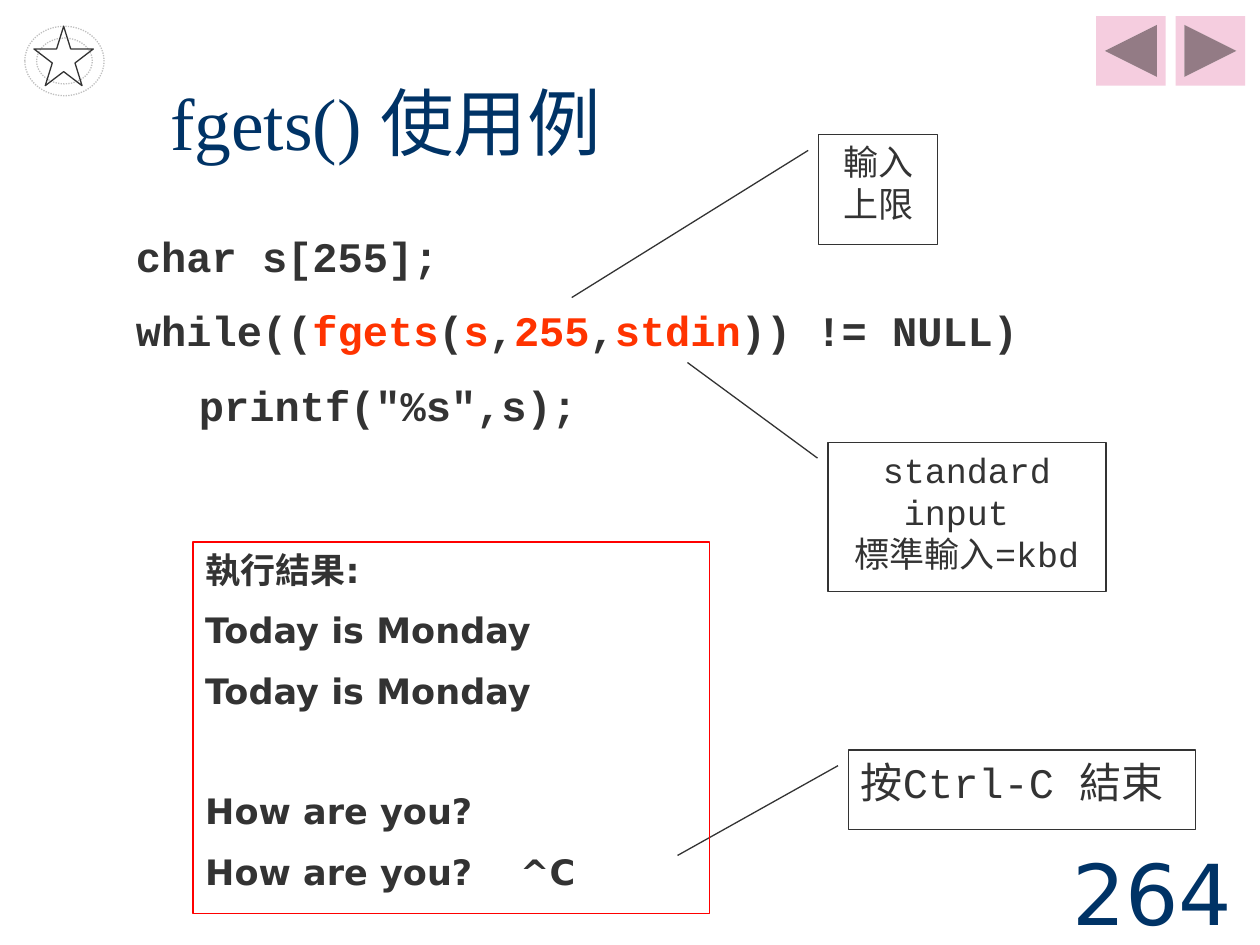
from dataclasses import dataclass

from pptx import Presentation
from pptx.dml.color import RGBColor
from pptx.enum.dml import MSO_LINE
from pptx.enum.shapes import MSO_SHAPE
from pptx.enum.text import MSO_ANCHOR, PP_ALIGN
from pptx.util import Pt


@dataclass(frozen=True)
class Theme:
    navy: RGBColor = RGBColor(0x00, 0x33, 0x66)
    ink: RGBColor = RGBColor(0x33, 0x33, 0x33)
    accent: RGBColor = RGBColor(0xFF, 0x33, 0x00)
    frame: RGBColor = RGBColor(0xFF, 0x00, 0x00)
    button: RGBColor = RGBColor(0xF5, 0xCD, 0xDF)
    ring: RGBColor = RGBColor(0xC0, 0xC0, 0xC0)
    serif: str = "Times New Roman"
    mono: str = "Courier New"
    sans: str = "DejaVu Sans"
    number_size: int = 48
    title_size: int = 42
    code_size: int = 24
    note_size: int = 20


theme = Theme()


def add_outline(page, kind, left, top, width, height, color, weight=0.75):
    """Add an unfilled preset shape with a plain outline."""
    shape = page.shapes.add_shape(kind, Pt(left), Pt(top), Pt(width), Pt(height))
    shape.shadow.inherit = False
    shape.fill.background()
    shape.line.color.rgb = color
    shape.line.width = Pt(weight)
    return shape


def write(box, lines, font, size, color=theme.ink, bold=False,
          align=PP_ALIGN.LEFT, anchor=MSO_ANCHOR.TOP, gaps=None):
    """Fill a box; each line is a list of (text, colour or None) spans."""
    frame = box.text_frame
    frame.word_wrap = True
    frame.vertical_anchor = anchor
    for index, spans in enumerate(lines):
        para = frame.paragraphs[0] if index == 0 else frame.add_paragraph()
        para.alignment = align
        if gaps:
            para.space_before = Pt(gaps[index])
        for text, span_color in spans:
            span = para.add_run()
            span.text = text
            span.font.name = font
            span.font.size = Pt(size)
            span.font.bold = bold
            span.font.color.rgb = span_color or color


deck = Presentation()
deck.slide_width, deck.slide_height = Pt(720), Pt(540)
page = deck.slides.add_slide(deck.slide_layouts[5])

# Navigation buttons and ring ornament
buttons = [(MSO_SHAPE.ACTION_BUTTON_FORWARD_OR_NEXT, 671.8),
           (MSO_SHAPE.ACTION_BUTTON_BACK_OR_PREVIOUS, 626.4)]
for kind, left in buttons:
    button = page.shapes.add_shape(kind, Pt(left), Pt(9.2), Pt(39.7), Pt(39.7))
    button.shadow.inherit = False
    button.fill.solid()
    button.fill.fore_color.rgb = theme.button
    button.line.fill.background()

ring = add_outline(page, MSO_SHAPE.DONUT, 14.2, 15, 45.3, 39.7, theme.ring)
ring.adjustments[0] = 0.17
ring.line.dash_style = MSO_LINE.ROUND_DOT

page_number = page.shapes.add_textbox(Pt(598.3), Pt(491.8), Pt(113), Pt(36))
write(page_number, [[("264", None)]], theme.sans, theme.number_size, theme.navy,
      align=PP_ALIGN.RIGHT, anchor=MSO_ANCHOR.MIDDLE)

title = page.shapes.title
title.left, title.top, title.width, title.height = Pt(90), Pt(24), Pt(612), Pt(90)
write(title, [[("fgets() 使用例", None)]], theme.serif, theme.title_size, theme.navy,
      anchor=MSO_ANCHOR.MIDDLE)

# Code sample
code_lines = [
    [("char s[255];", None)],
    [("while((", None), ("fgets", theme.accent), ("(", None), ("s", theme.accent),
     (",", None), ("255", theme.accent), (",", None), ("stdin", theme.accent),
     (")) != NULL)", None)],
    [("\tprintf(\"%s\",s);", None)],
]
code = page.shapes.add_textbox(Pt(70.6), Pt(128.2), Pt(589), Pt(122.4))
write(code, code_lines, theme.mono, theme.code_size, bold=True, gaps=[6, 13.7, 13.7])

# Callouts: place, pointer (y, x, y, x as shares of the box), lines, size, alignment
callouts = [
    ((473.2, 252.8, 158.8, 85), (0.106, -0.038, -0.537, -0.506),
     ["standard input ", "標準輸入=kbd"], theme.note_size, PP_ALIGN.CENTER),
    ((467.8, 77, 68, 62.6), (0.144, -0.088, 1.487, -2.075),
     ["輸入上限"], theme.note_size, PP_ALIGN.CENTER),
    ((484.8, 428.6, 198.5, 45.3), (0.198, -0.03, 1.331, -0.492),
     ["按Ctrl-C 結束"], theme.code_size, PP_ALIGN.LEFT),
]
for place, pointer, lines, size, align in callouts:
    callout = add_outline(page, MSO_SHAPE.LINE_CALLOUT_1, *place, theme.ink)
    for index, share in enumerate(pointer):
        callout.adjustments[index] = share
    write(callout, [[(line, None)] for line in lines], theme.mono, size, align=align)

# Program output
output_lines = ["執行結果:", "Today is Monday", "Today is Monday",
                "How are you?", "How are you?\t^C"]
output = add_outline(page, MSO_SHAPE.RECTANGLE, 110.2, 309.6, 295.2, 212.4, theme.frame, 1)
write(output, [[(line, None)] for line in output_lines], theme.sans, theme.note_size,
      bold=True, gaps=[3, 10.7, 10.7, 44.7, 10.7])

add_outline(page, MSO_SHAPE.STAR_5_POINT, 19.4, 15, 34, 34, theme.ink)

deck.save("out.pptx")
